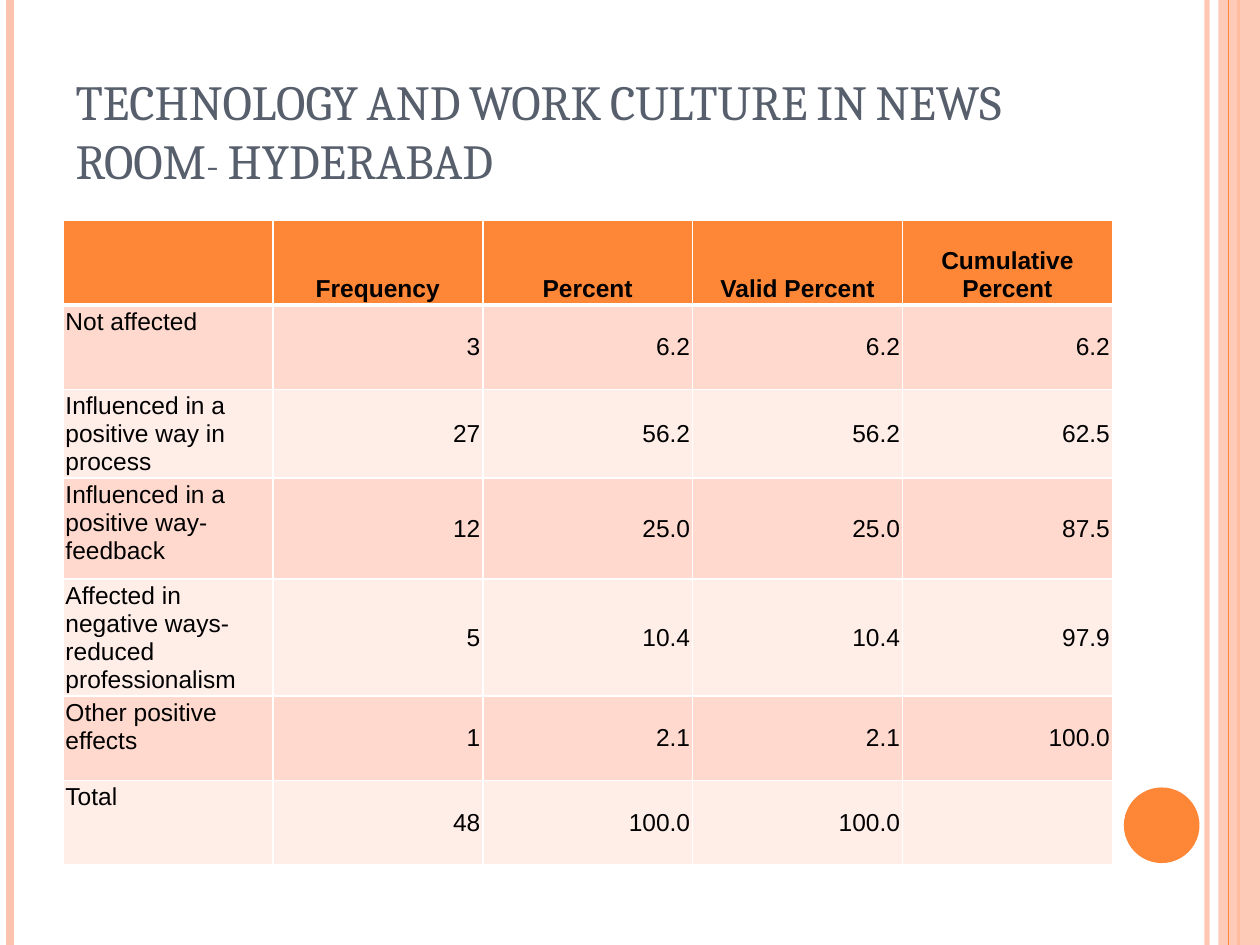
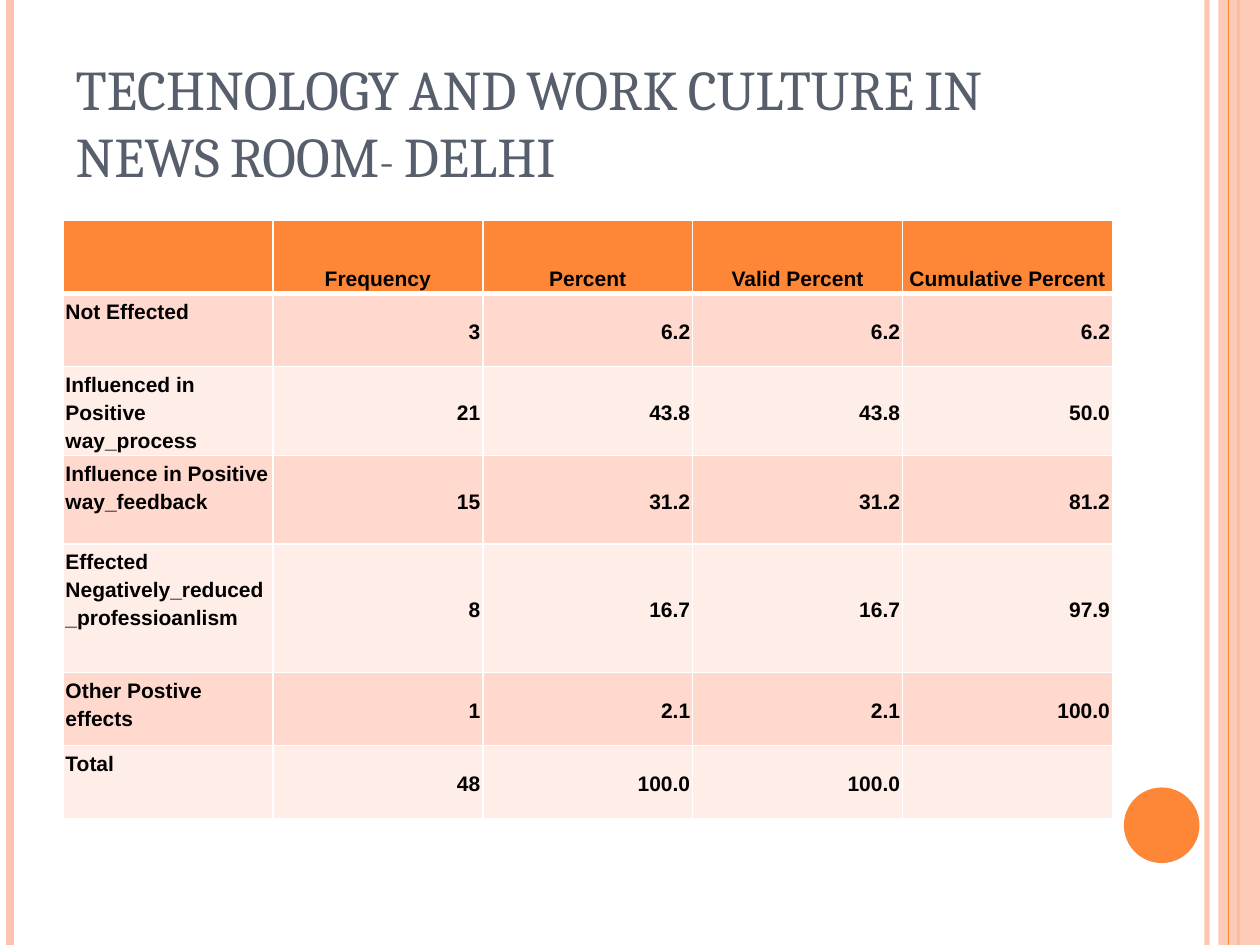
from lxml import etree
from pptx import Presentation
from pptx.dml.color import RGBColor
from pptx.enum.shapes import MSO_CONNECTOR as CONN, MSO_SHAPE as SHAPE
from pptx.enum.text import MSO_ANCHOR as ANCHOR, MSO_AUTO_SIZE as AUTO, PP_ALIGN as ALIGN
from pptx.oxml.ns import qn
from pptx.util import Inches, Pt

ORANGE, PEACH, SLATE, WHITE, BLACK = "FE8637", "FEC3AE", "575F6D", "FFFFFF", "000000"
ROW_FILLS = ["FFEDE8", "FFD9CE"]  # even rows, odd rows
W, H = 10, 7.5
LEFT, TABLE_TOP, TABLE_W, COLS = 0.5, 1.75, 8.33, 5

# Vertical rules and the side band, back to front: kind, x, size, colour, opacity
EDGES = [
    ("line", 9.58, 3, PEACH, 93),
    ("line", 0.08, 4.5, PEACH, 100),
    ("line", 9.83, 1.5, ORANGE, 100),
    ("band", 9.67, 0.33, PEACH, 87),
    ("line", 9.75, 0.75, ORANGE, 100),
]

HEADER = ["", "Frequency", "Percent", "Valid Percent", "Cumulative Percent"]
SLIDES = [
    dict(
        title="TECHNOLOGY AND WORK CULTURE IN NEWS ROOM- HYDERABAD",
        title_size=28, size=14, bold=False,
        heights=[0.67, 0.67, 0.67, 0.8, 0.67, 0.67, 0.67],
        rows=[
            ["Not affected", "3", "6.2", "6.2", "6.2"],
            ["Influenced in a positive way in process", "27", "56.2", "56.2", "62.5"],
            ["Influenced in a positive way-feedback", "12", "25.0", "25.0", "87.5"],
            ["Affected in negative ways- reduced professionalism", "5", "10.4", "10.4", "97.9"],
            ["Other positive effects", "1", "2.1", "2.1", "100.0"],
            ["Total", "48", "100.0", "100.0", ""],
        ],
    ),
    dict(
        title="TECHNOLOGY AND WORK CULTURE IN NEWS ROOM- DELHI",
        title_size=32, size=12, bold=True,
        heights=[0.58, 0.58, 0.7, 0.7, 1.02, 0.58, 0.58],
        rows=[
            ["Not Effected", "3", "6.2", "6.2", "6.2"],
            ["Influenced in Positive way_process", "21", "43.8", "43.8", "50.0"],
            ["Influence in Positive way_feedback", "15", "31.2", "31.2", "81.2"],
            ["Effected Negatively_reduced_professioanlism", "8", "16.7", "16.7", "97.9"],
            ["Other Postive effects", "1", "2.1", "2.1", "100.0"],
            ["Total", "48", "100.0", "100.0", ""],
        ],
    ),
]


def paint(fill, color):
    fill.solid()
    fill.fore_color.rgb = RGBColor.from_string(color)


def write(tf, text, size, font="Arial", color=BLACK, bold=False,
          align=ALIGN.LEFT, spacing=None, small_caps=False):
    p = tf.paragraphs[0]
    p.alignment = align
    if spacing:
        p.line_spacing = Pt(spacing)
    r = p.add_run()
    r.text = text
    r.font.size, r.font.name, r.font.bold = Pt(size), font, bold
    paint(r.font.fill, color)
    if small_caps:
        r._r.get_or_add_rPr().set("cap", "small")


prs = Presentation()
prs.slide_width, prs.slide_height = Inches(W), Inches(H)

for data in SLIDES:
    slide = prs.slides.add_slide(prs.slide_layouts[5])
    paint(slide.background.fill, WHITE)
    title = slide.shapes.title

    # Edge rules and band
    for kind, x, size, color, opacity in EDGES:
        if kind == "line":
            sp = slide.shapes.add_connector(CONN.STRAIGHT, Inches(x), 0, Inches(x), Inches(H))
            paint(sp.line.fill, color)
            sp.line.width = Pt(size)
            etree.SubElement(sp._element.spPr, qn("a:effectLst"))
        else:
            sp = slide.shapes.add_shape(SHAPE.RECTANGLE, Inches(x), 0, Inches(size), Inches(H))
            paint(sp.fill, color)
            sp.line.fill.background()
            sp.shadow.inherit = False
        if opacity < 100:
            clr = next(sp._element.iter(qn("a:srgbClr")))
            etree.SubElement(clr, qn("a:alpha"), val=str(opacity * 1000))

    # Corner disc
    disc = slide.shapes.add_shape(SHAPE.OVAL, Inches(8.92), Inches(6.25), Inches(0.6), Inches(0.6))
    paint(disc.fill, ORANGE)
    disc.line.fill.background()
    disc.shadow.inherit = False

    # Title
    title.left, title.top = Inches(LEFT), Inches(0.3)
    title.width, title.height = Inches(8.17), Inches(1.25)
    tf = title.text_frame
    tf.word_wrap, tf.auto_size, tf.vertical_anchor = True, AUTO.NONE, ANCHOR.BOTTOM
    write(tf, data["title"], data["title_size"], font="Cambria", color=SLATE, small_caps=True)

    # Table
    rows = [HEADER] + data["rows"]
    table = slide.shapes.add_table(len(rows), COLS, Inches(LEFT), Inches(TABLE_TOP),
                                   Inches(TABLE_W), Inches(sum(data["heights"]))).table
    for col in table.columns:
        col.width = Inches(TABLE_W / COLS)
    for i, values in enumerate(rows):
        table.rows[i].height = Inches(data["heights"][i])
        for j, value in enumerate(values):
            cell = table.cell(i, j)
            cell.margin_left = cell.margin_right = Inches(0.02)
            cell.margin_top = cell.margin_bottom = Inches(0.02)
            paint(cell.fill, ROW_FILLS[i % 2] if i else ORANGE)

            # White borders, heavier below the header
            widths = {"L": 1, "R": 1, "T": 3 if i == 1 else 1, "B": 1 if i else 3}
            tc_pr = cell._tc.get_or_add_tcPr()
            for k, (side, width) in enumerate(widths.items()):
                ln = etree.Element(qn("a:ln" + side), w=str(Pt(width)))
                fill = etree.SubElement(ln, qn("a:solidFill"))
                etree.SubElement(fill, qn("a:srgbClr"), val=WHITE)
                tc_pr.insert(k, ln)

            if i == 0:
                align, anchor = ALIGN.CENTER, ANCHOR.BOTTOM
            elif j == 0:
                align, anchor = ALIGN.LEFT, ANCHOR.TOP
            else:
                align, anchor = ALIGN.RIGHT, ANCHOR.MIDDLE
            cell.vertical_anchor = anchor
            if value:
                write(cell.text_frame, value, data["size"], bold=i == 0 or data["bold"],
                      align=align, spacing=16)

prs.save("out.pptx")
